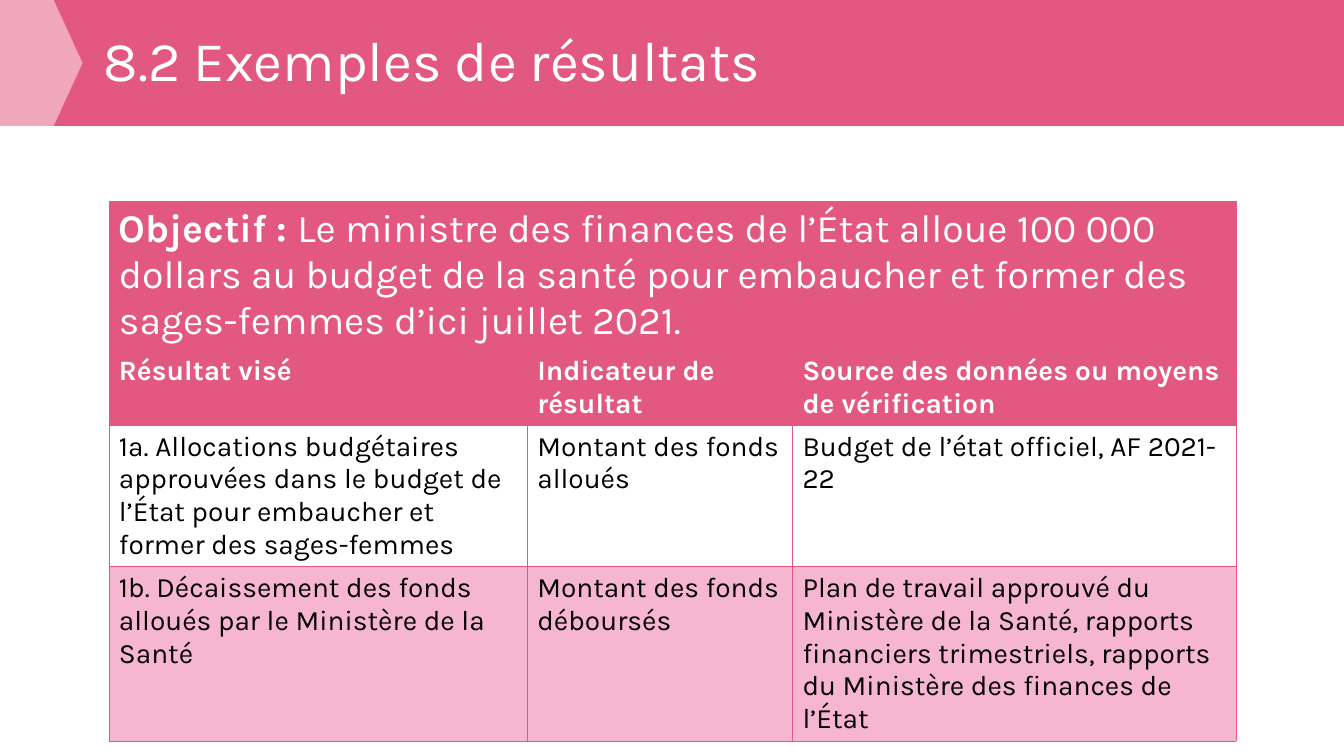
from lxml import etree
from pptx import Presentation
from pptx.dml.color import RGBColor
from pptx.enum.shapes import MSO_SHAPE
from pptx.enum.text import MSO_ANCHOR, MSO_AUTO_SIZE, PP_ALIGN
from pptx.oxml.ns import qn
from pptx.util import Inches, Pt

RECTANGLE = MSO_SHAPE.RECTANGLE
PENTAGON = MSO_SHAPE.PENTAGON
MIDDLE = MSO_ANCHOR.MIDDLE
TOP = MSO_ANCHOR.TOP
NO_AUTOFIT = MSO_AUTO_SIZE.NONE
LEFT = PP_ALIGN.LEFT

COLORS = {"rose": "E35880", "pale": "F6B5D1", "white": "FFFFFF", "black": "000000"}
FONT = "Karla"
TITLE_ONLY = 5

OBJECTIVE = (
    "Le ministre des finances de l’État alloue 100 000 dollars au budget de la santé "
    "pour embaucher et former des sages-femmes d’ici juillet 2021."
)
HEADINGS = ["Résultat visé", "Indicateur de résultat", "Source des données ou moyens de vérification"]
ALLOCATION = [
    "1a. Allocations budgétaires approuvées dans le budget de l’État pour embaucher et former des sages-femmes",
    "Montant des fonds alloués",
    "Budget de l’état officiel, AF 2021-22",
]
DISBURSEMENT = [
    "1b. Décaissement des fonds alloués par le Ministère de la Santé",
    "Montant des fonds déboursés",
    "Plan de travail approuvé du Ministère de la Santé, rapports financiers trimestriels, "
    "rapports du Ministère des finances de l’État",
]


def color(name):
    return RGBColor.from_string(COLORS[name])


def write(paragraph, text, size=20, ink="white", bold=False):
    run = paragraph.add_run()
    run.text = text
    run.font.name = FONT
    run.font.size = Pt(size)
    run.font.bold = bold
    run.font.color.rgb = color(ink)


class ResultsSlide:
    def __init__(self, deck):
        self.width, self.height = deck.slide_width, deck.slide_height
        self.slide = deck.slides.add_slide(deck.slide_layouts[TITLE_ONLY])
        self.shapes = self.slide.shapes

    def across(self, percent):
        return round(self.width * percent / 100)

    def down(self, percent):
        return round(self.height * percent / 100)

    def box(self, left, top, width, height):
        return self.across(left), self.down(top), self.across(width), self.down(height)

    def band(self, kind, place, fill, opacity=100):
        band = self.shapes.add_shape(kind, *self.box(*place))
        band.shadow.inherit = False
        band.line.fill.background()
        band.fill.solid()
        band.fill.fore_color.rgb = color(fill)
        if opacity < 100:
            tint = band.element.spPr.find(".//" + qn("a:srgbClr"))
            etree.SubElement(tint, qn("a:alpha"), val=str(opacity * 1000))
        return band

    def title(self, text, place):
        title = self.shapes.title
        title.left, title.top, title.width, title.height = self.box(*place)
        frame = title.text_frame
        frame.auto_size = NO_AUTOFIT
        frame.word_wrap = True
        frame.vertical_anchor = MIDDLE
        heading = frame.paragraphs[0]
        heading.alignment = LEFT
        heading.line_spacing = 0.9
        write(heading, text, size=40)
        self.shapes.element.append(title.element)

    def table(self, left, top, widths, heights):
        place = self.box(left, top, sum(widths), sum(heights))
        table = self.shapes.add_table(len(heights), len(widths), *place).table
        table.first_row = table.horz_banding = False
        for column, width in zip(table.columns, widths):
            column.width = self.across(width)
        for row, height in zip(table.rows, heights):
            row.height = self.down(height)
        return table

    def cell(self, cell, fill):
        cell.vertical_anchor = TOP
        properties = cell._tc.get_or_add_tcPr()
        for side in ("lnL", "lnR", "lnT", "lnB"):
            border = etree.SubElement(properties, qn(f"a:{side}"), w=str(Pt(0.5)))
            paint = etree.SubElement(border, qn("a:solidFill"))
            etree.SubElement(paint, qn("a:srgbClr"), val=COLORS["rose"])
        cell.fill.solid()
        cell.fill.fore_color.rgb = color(fill)
        return cell.text_frame.paragraphs[0]

    def row(self, table, index, texts, fill, **style):
        for column, text in enumerate(texts):
            paragraph = self.cell(table.cell(index, column), fill)
            if text:
                write(paragraph, text, **style)


def main():
    deck = Presentation()
    deck.slide_width, deck.slide_height = Inches(13.33), Inches(7.5)
    page = ResultsSlide(deck)

    page.band(RECTANGLE, (0, 0, 100, 16.67), "rose")
    chevron = page.band(PENTAGON, (0, 0, 6.15, 16.67), "white", opacity=47)
    chevron.adjustments[0] = 0.35
    page.title("8.2 Exemples de résultats", (6.98, 2.67, 79.37, 11.47))

    results = page.table(8.1, 26.67, [31.13, 19.73, 33], [19.6, 10, 18.67, 23.07])
    page.row(results, 0, ["Objectif : ", "", ""], "rose", size=28, bold=True)
    results.cell(0, 0).merge(results.cell(0, 2))
    write(results.cell(0, 0).text_frame.paragraphs[0], OBJECTIVE, size=28)
    page.row(results, 1, HEADINGS, "rose", bold=True)
    page.row(results, 2, ALLOCATION, "white", ink="black")
    page.row(results, 3, DISBURSEMENT, "pale", ink="black")

    deck.save("out.pptx")


if __name__ == "__main__":
    main()
